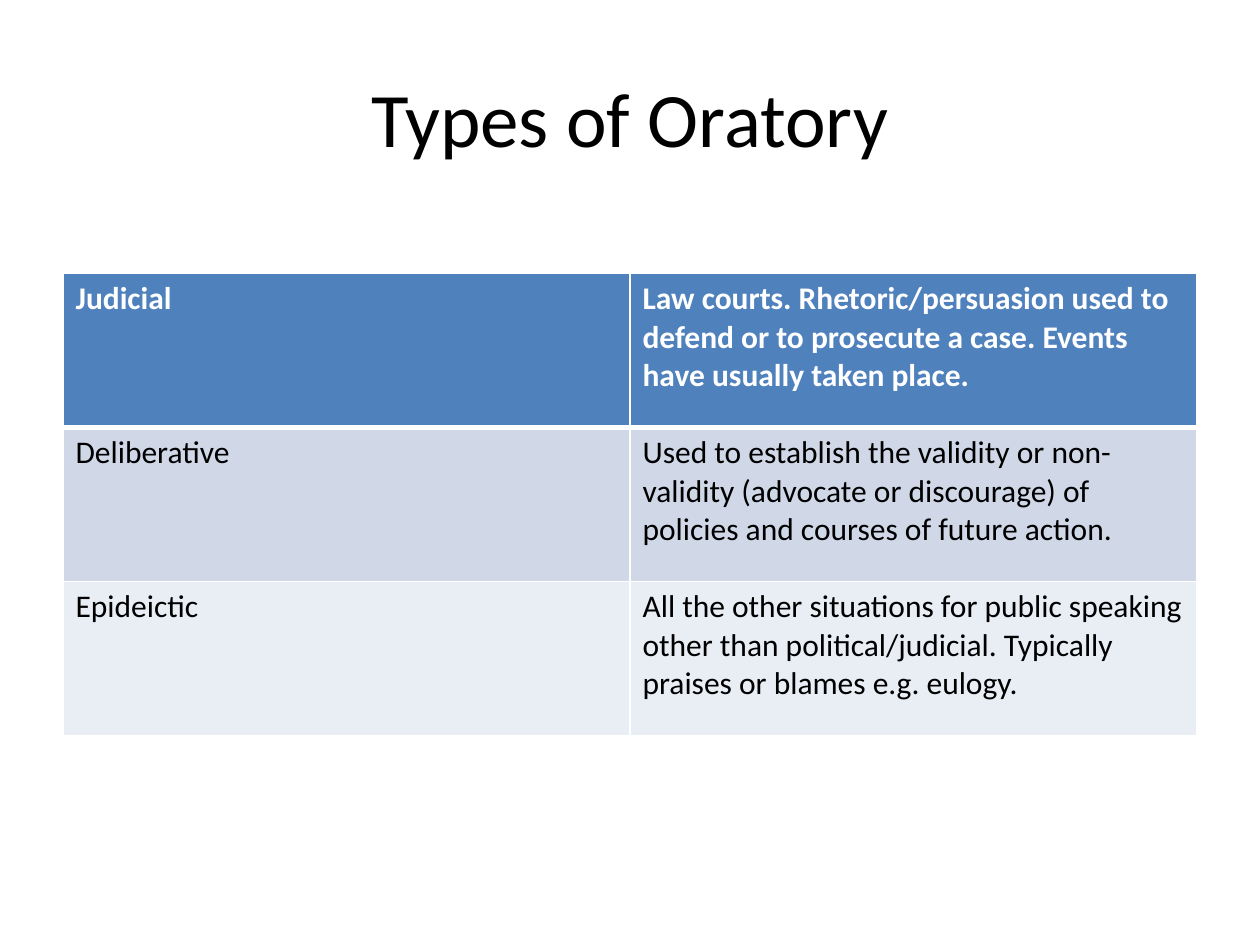
from lxml import etree
from pptx import Presentation
from pptx.dml.color import RGBColor
from pptx.enum import text
from pptx.oxml import ns
from pptx.util import Pt


def color(hex_string):
    return RGBColor.from_string(hex_string)


def add_border(cell, side, width, hex_string):
    line = etree.SubElement(cell._tc.get_or_add_tcPr(), ns.qn(f"a:{side}"), w=str(Pt(width)))
    fill = etree.SubElement(line, ns.qn("a:solidFill"))
    etree.SubElement(fill, ns.qn("a:srgbClr"), val=hex_string)


presentation = Presentation()
presentation.slide_width, presentation.slide_height = Pt(720), Pt(540)
slide = presentation.slides.add_slide(presentation.slide_layouts[6])

# Title
title = slide.shapes.add_textbox(Pt(36), Pt(21.6), Pt(648), Pt(90))
title.text_frame.word_wrap = True
title.text_frame.vertical_anchor = text.MSO_ANCHOR.MIDDLE
title.text_frame.text = "Types of Oratory"
paragraph = title.text_frame.paragraphs[0]
paragraph.alignment = text.PP_ALIGN.CENTER
font = paragraph.runs[0].font
font.name, font.size = "Calibri", Pt(44)
font.color.rgb = color("000000")

# Table content: type, description, row fill, text colour
oratory_types = [
    ("Judicial",
     "Law courts. Rhetoric/persuasion used to defend or to prosecute a case. "
     "Events have usually taken place.",
     "4F81BD", "FFFFFF"),
    ("Deliberative",
     "Used to establish the validity or non-validity (advocate or discourage) "
     "of policies and courses of future action.",
     "D0D8E8", "000000"),
    ("Epideictic",
     "All the other situations for public speaking other than "
     "political/judicial. Typically praises or blames e.g. eulogy.",
     "E9EDF4", "000000"),
]

# Table
row_height = 88
table = slide.shapes.add_table(
    len(oratory_types), 2, Pt(36), Pt(156.25), Pt(648), Pt(row_height * len(oratory_types))
).table

for row, (name, description, fill, text_color) in enumerate(oratory_types):
    for column, wording in enumerate((name, description)):
        cell = table.cell(row, column)
        # The rule under the header row is thicker
        top_width = 3 if row == 1 else 1
        bottom_width = 3 if row == 0 else 1
        for side, width in (("lnL", 1), ("lnR", 1), ("lnT", top_width), ("lnB", bottom_width)):
            add_border(cell, side, width, "FFFFFF")
        cell.fill.solid()
        cell.fill.fore_color.rgb = color(fill)
        cell.text_frame.text = wording
        font = cell.text_frame.paragraphs[0].runs[0].font
        font.name, font.size, font.bold = "Calibri", Pt(18), row == 0
        font.color.rgb = color(text_color)

presentation.save("out.pptx")
